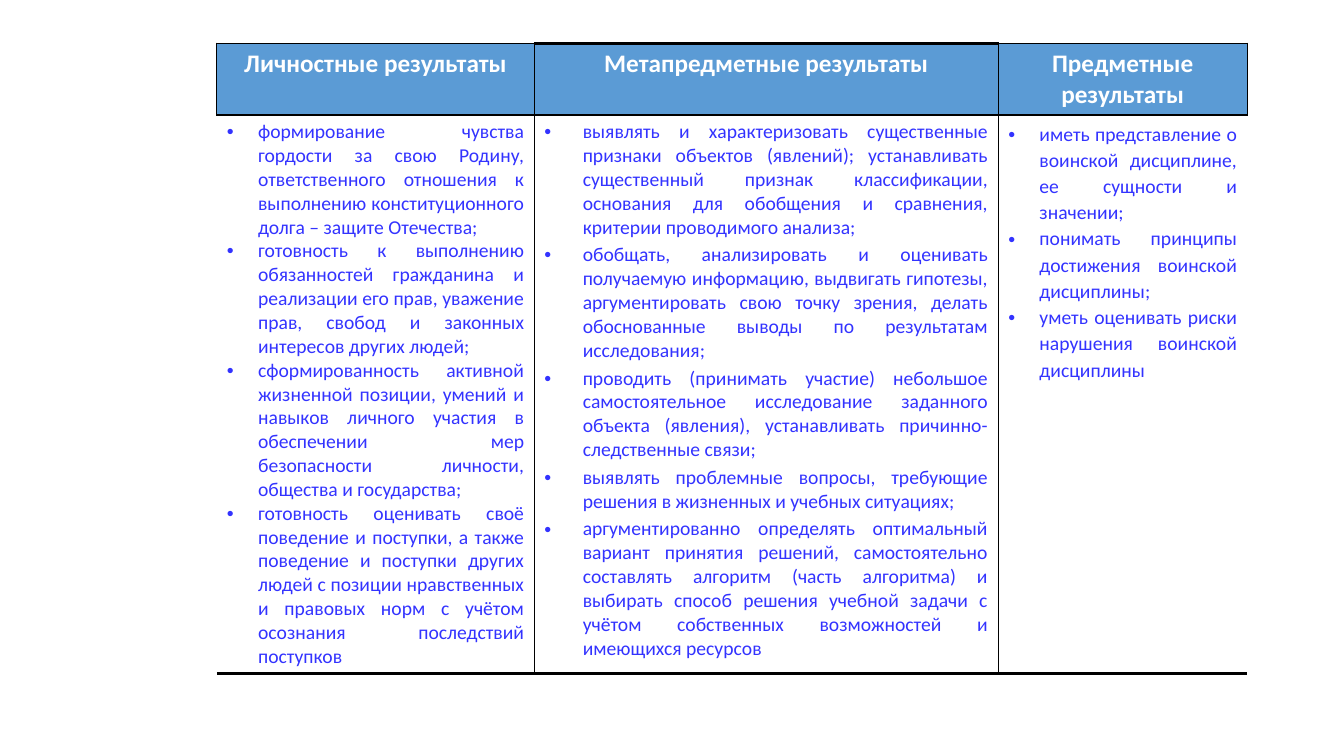
from lxml import etree
from pptx import Presentation
from pptx.dml.color import RGBColor
from pptx.enum.text import PP_ALIGN
from pptx.oxml.ns import qn
from pptx.util import Inches, Pt

CENTER, JUSTIFY = PP_ALIGN.CENTER, PP_ALIGN.JUSTIFY
WHITE = RGBColor(0xFF, 0xFF, 0xFF)
BLACK = RGBColor(0x00, 0x00, 0x00)
HEADER_BLUE = RGBColor(0x5B, 0x9B, 0xD5)
TEXT_BLUE = RGBColor(0x33, 0x33, 0xFF)

TABLE_BOX = (2.15, 0.43, 10.22, 6.25)
HEADER_HEIGHT = 0.71
HEADER_FONT = {"name": "Calibri", "size": Pt(18), "bold": True}
BODY_FONT = {"name": "Calibri", "size": Pt(14), "bold": False}

COLUMNS = [
    {
        "title": "Личностные результаты",
        "width": 3.15,
        "indent": 0.31,
        "spacing": {},
        "header_borders": {"L": 1, "R": 1, "T": 1, "B": 1},
        "body_borders": {"L": 0, "R": 1, "T": 1, "B": 2},
        "items": [
            "формирование чувства гордости за свою Родину, ответственного отношения к "
            "выполнению конституционного долга – защите Отечества;",
            "готовность к выполнению обязанностей гражданина и реализации его прав, "
            "уважение прав, свобод и законных интересов других людей;",
            "сформированность активной жизненной позиции, умений и навыков личного участия "
            "в обеспечении мер безопасности личности, общества и государства;",
            "готовность оценивать своё поведение и поступки, а также поведение и поступки "
            "других людей с позиции нравственных и правовых норм с учётом осознания "
            "последствий поступков",
        ],
    },
    {
        "title": "Метапредметные результаты",
        "width": 4.6,
        "indent": 0.38,
        "spacing": {"space_before": Pt(2.8)},
        "header_borders": {"L": 1, "R": 1, "T": 2, "B": 1},
        "body_borders": {"L": 1, "R": 1, "T": 1, "B": 2},
        "items": [
            "выявлять и характеризовать существенные признаки объектов (явлений); "
            "устанавливать существенный признак классификации, основания для обобщения и "
            "сравнения, критерии проводимого анализа;",
            "обобщать, анализировать и оценивать получаемую информацию, выдвигать гипотезы, "
            "аргументировать свою точку зрения, делать обоснованные выводы по результатам "
            "исследования;",
            "проводить (принимать участие) небольшое самостоятельное исследование заданного "
            "объекта (явления), устанавливать причинно-следственные связи;",
            "выявлять проблемные вопросы, требующие решения в жизненных и учебных ситуациях;",
            "аргументированно определять оптимальный вариант принятия решений, "
            "самостоятельно составлять алгоритм (часть алгоритма) и выбирать способ решения "
            "учебной задачи с учётом собственных возможностей и имеющихся ресурсов",
        ],
    },
    {
        "title": "Предметные результаты",
        "width": 2.47,
        "indent": 0.31,
        "spacing": {"line_spacing": 1.1},
        "header_borders": {"L": 1, "R": 1, "T": 1, "B": 1},
        "body_borders": {"L": 1, "R": 0, "T": 1, "B": 2},
        "items": [
            "иметь представление о воинской дисциплине, ее сущности и значении;",
            "понимать принципы достижения воинской дисциплины;",
            "уметь оценивать риски нарушения воинской дисциплины",
        ],
    },
]


def apply_format(target, values):
    """Set every attribute named in values on target."""
    for name, value in values.items():
        setattr(target, name, value)


def style_cell(cell, color, borders):
    """Give a cell its border widths in points and its fill."""
    properties = cell._tc.get_or_add_tcPr()
    for side, width in borders.items():
        line = etree.SubElement(properties, qn(f"a:ln{side}"), w=str(Pt(width)))
        if width:
            paint = etree.SubElement(line, qn("a:solidFill"))
            etree.SubElement(paint, qn("a:srgbClr"), val=str(BLACK))
        else:
            etree.SubElement(line, qn("a:noFill"))
    cell.fill.solid()
    cell.fill.fore_color.rgb = color


def add_span(para, text, font, color):
    """Add one formatted run to a paragraph."""
    span = para.add_run()
    span.text = text
    apply_format(span.font, font)
    span.font.color.rgb = color


def add_bullet(para, indent):
    """Give a paragraph a bullet with a hanging indent in inches."""
    properties = para._p.get_or_add_pPr()
    properties.set("marL", str(Inches(indent)))
    properties.set("indent", str(-Inches(indent)))
    etree.SubElement(properties, qn("a:buFont"), typeface="Arial")
    etree.SubElement(properties, qn("a:buChar"), char="•")


def fill_header(cell, column):
    """Write a column title."""
    style_cell(cell, HEADER_BLUE, column["header_borders"])
    para = cell.text_frame.paragraphs[0]
    para.alignment = CENTER
    add_span(para, column["title"], HEADER_FONT, WHITE)


def fill_body(cell, column):
    """Write the bulleted results of a column."""
    style_cell(cell, WHITE, column["body_borders"])
    frame = cell.text_frame
    for index, text in enumerate(column["items"]):
        para = frame.add_paragraph() if index else frame.paragraphs[0]
        add_bullet(para, column["indent"])
        para.alignment = JUSTIFY
        apply_format(para, column["spacing"])
        if index == 0:
            para.space_before = None
        add_span(para, text, BODY_FONT, TEXT_BLUE)


def add_results_table(page, box):
    """Place the table of learning results in the given box."""
    frame = page.shapes.add_table(2, len(COLUMNS), *map(Inches, box))
    table = frame.table
    table.horz_banding = False
    table.rows[0].height = Inches(HEADER_HEIGHT)
    table.rows[1].height = Inches(box[3] - HEADER_HEIGHT)
    for index, column in enumerate(COLUMNS):
        table.columns[index].width = Inches(column["width"])
        fill_header(table.cell(0, index), column)
        fill_body(table.cell(1, index), column)


def main():
    """Build and save the deck."""
    deck = Presentation()
    deck.slide_width, deck.slide_height = Inches(13.33), Inches(7.5)
    page = deck.slides.add_slide(deck.slide_layouts[6])
    add_results_table(page, TABLE_BOX)
    deck.save("out.pptx")


if __name__ == "__main__":
    main()
